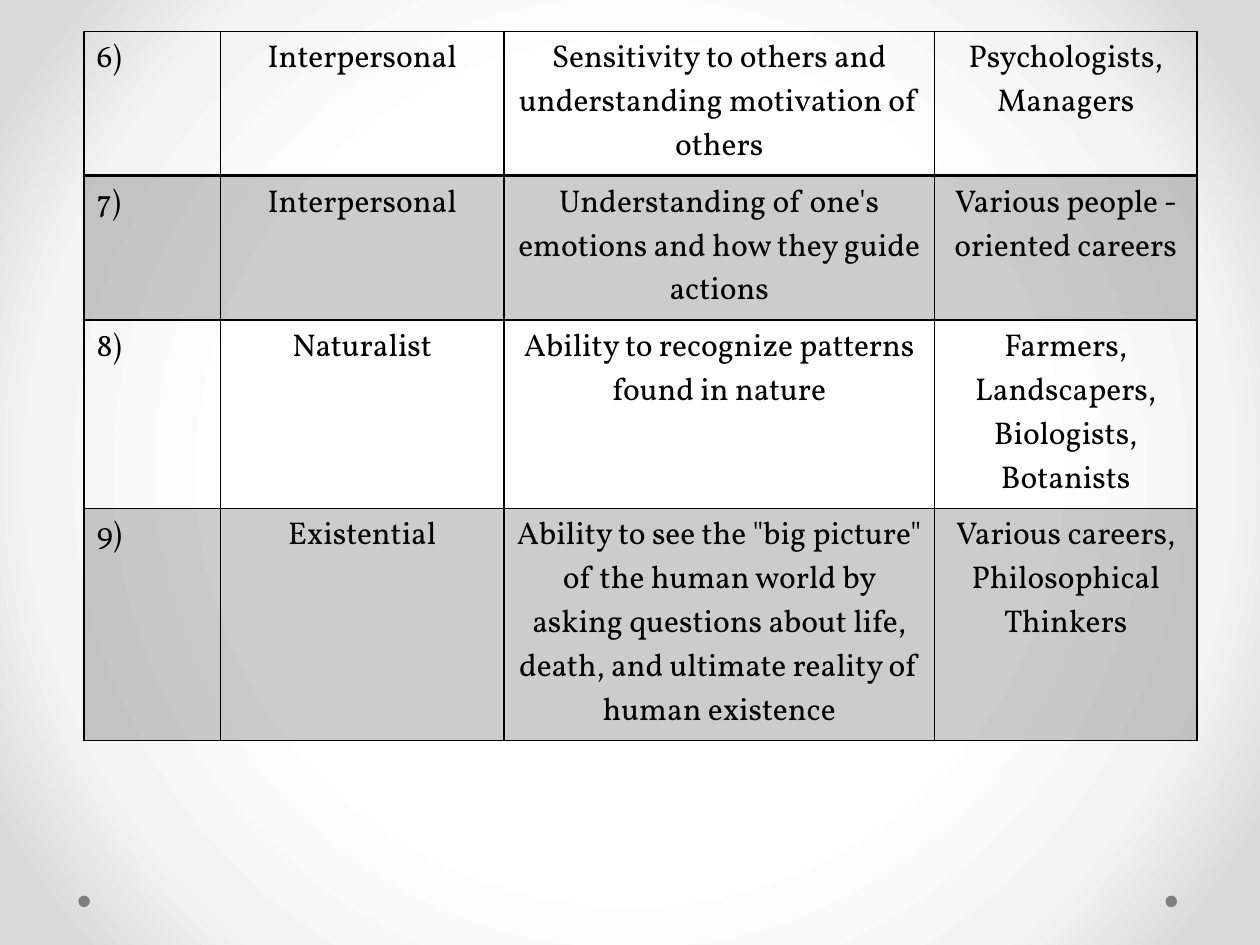
from lxml import etree
from pptx import Presentation
from pptx import util as u
from pptx.dml import color
from pptx.enum import shapes, text
from pptx.oxml import parse_xml
from pptx.oxml import ns

BLACK, GRAY = "000000", "808080"
COLUMNS = [13, 27, 41, 25]
ROW_HEIGHTS = [7.2, 7.2, 7.2, 21.4]
INTELLIGENCES = [
    ("6)", "Interpersonal",
     "Sensitivity to others and understanding motivation of others",
     "Psychologists, Managers"),
    ("7)", "Interpersonal",
     "Understanding of one's emotions and how they guide actions",
     "Various people - oriented careers"),
    ("8)", "Naturalist",
     "Ability to recognize patterns found in nature",
     "Farmers, Landscapers, Biologists, Botanists"),
    ("9)", "Existential",
     'Ability to see the "big picture" of the human world by asking questions '
     "about life, death, and ultimate reality of human existence",
     "Various careers, Philosophical Thinkers"),
]


def rgb(value):
    return color.RGBColor.from_string(value)


def grid(units):
    return u.Inches(units / 12)


class SlideBuilder:
    font_name = "Vollkorn"
    font_size = 18

    def __init__(self, deck):
        self.page = deck.slides.add_slide(deck.slide_layouts[6])

    def background(self, stops):
        fill = self.page.background.fill
        fill.gradient()
        old = next(self.page.element.iter(ns.qn("a:gradFill")))
        marks = "".join(
            f'<a:gs pos="{share * 1000}"><a:srgbClr val="{tone}"/></a:gs>'
            for share, tone in stops)
        radial = parse_xml(
            f'<a:gradFill {ns.nsdecls("a")} rotWithShape="1">'
            f'<a:gsLst>{marks}</a:gsLst><a:path path="circle">'
            '<a:fillToRect l="50000" t="50000" r="50000" b="50000"/>'
            '</a:path></a:gradFill>')
        old.getparent().replace(old, radial)

    def dot(self, left, top, size):
        dot = self.page.shapes.add_shape(
            shapes.MSO_SHAPE.OVAL, grid(left), grid(top), grid(size), grid(size))
        dot.shadow.inherit = False
        dot.fill.solid()
        dot.fill.fore_color.rgb = rgb(GRAY)
        dot.line.fill.background()

    def borders(self, cell, bottom):
        properties = cell._tc.get_or_add_tcPr()
        for side, width in (("L", 1), ("R", 1), ("T", 1), ("B", bottom)):
            line = etree.SubElement(
                properties, ns.qn(f"a:ln{side}"), w=str(u.Pt(width)))
            solid = etree.SubElement(line, ns.qn("a:solidFill"))
            etree.SubElement(solid, ns.qn("a:srgbClr"), val=BLACK)

    def shade(self, cell, opacity):
        if not opacity:
            cell.fill.background()
            return
        cell.fill.solid()
        cell.fill.fore_color.rgb = rgb(BLACK)
        solid = cell._tc.tcPr.find(ns.qn("a:solidFill"))
        tone = solid.find(ns.qn("a:srgbClr"))
        etree.SubElement(tone, ns.qn("a:alpha"), val=str(opacity * 1000))

    def label(self, cell, words, align):
        cell.text = words
        para = cell.text_frame.paragraphs[0]
        para.alignment = align
        para.font.name = self.font_name
        para.font.size = u.Pt(self.font_size)
        para.font.color.rgb = rgb(BLACK)

    def table(self, left, top, columns, heights, rows):
        table = self.page.shapes.add_table(
            len(rows), len(columns), grid(left), grid(top),
            grid(sum(columns)), grid(sum(heights))).table
        table.first_row = table.horz_banding = False
        for column, width in zip(table.columns, columns):
            column.width = grid(width)
        for row, height in zip(table.rows, heights):
            row.height = grid(height)
        for i, row in enumerate(rows):
            for j, words in enumerate(row):
                cell = table.cell(i, j)
                align = text.PP_ALIGN.CENTER if j else text.PP_ALIGN.LEFT
                self.label(cell, words, align)
                self.borders(cell, bottom=1 if i else 2)
                self.shade(cell, opacity=20 if i % 2 else 0)


def main():
    deck = Presentation()
    deck.slide_width, deck.slide_height = grid(120), grid(90)
    slide = SlideBuilder(deck)
    slide.background([(50, "FFFFFF"), (76, "F4F4F4"), (92, "DADADA")])
    for left in (111, 7.46):
        slide.dot(left, 85.3, 1.1)
    slide.table(8, 3, COLUMNS, ROW_HEIGHTS, INTELLIGENCES)
    deck.save("out.pptx")


if __name__ == "__main__":
    main()
